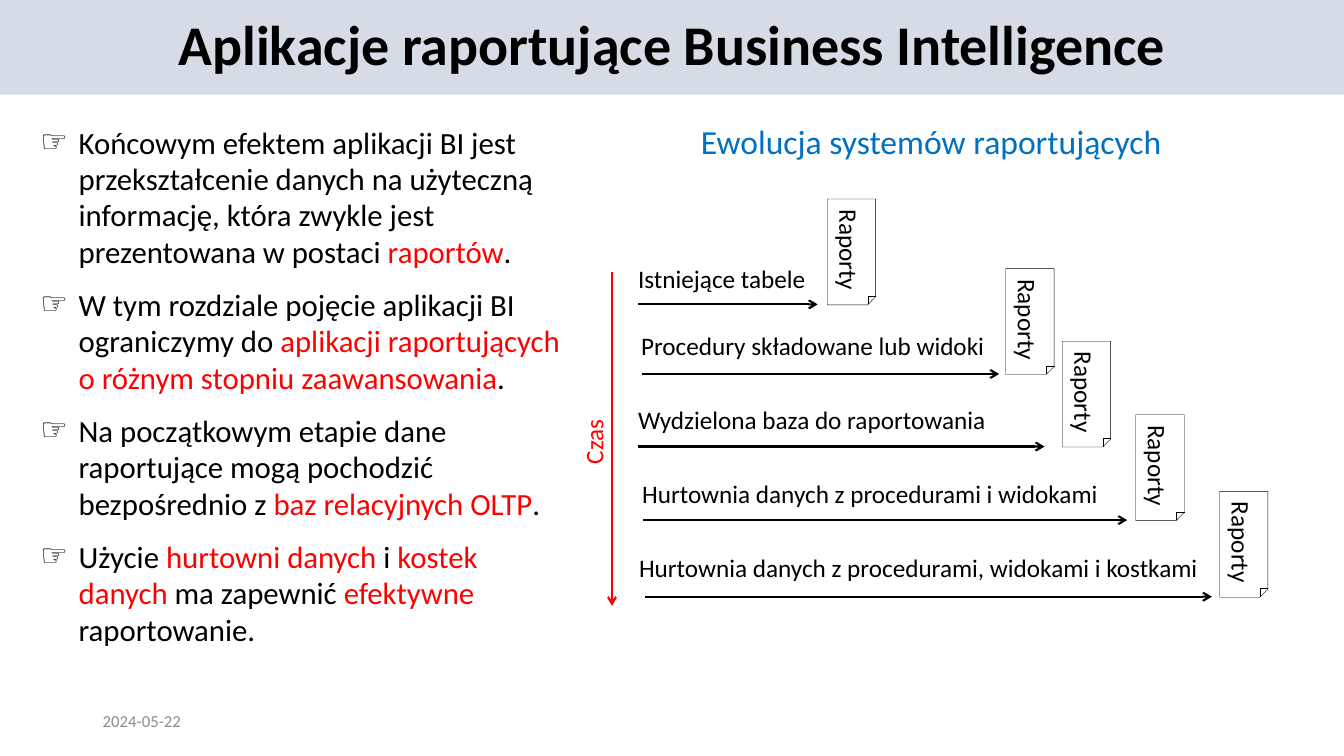
from lxml.etree import SubElement
from pptx import Presentation
from pptx.dml.color import RGBColor
from pptx.enum.shapes import MSO_CONNECTOR as Wire, MSO_SHAPE as Form
from pptx.enum.text import MSO_ANCHOR as Anchor, MSO_AUTO_SIZE as Auto, PP_ALIGN as Align
from pptx.oxml.ns import qn
from pptx.util import Inches, Pt

BLACK, RED, BLUE, GREY, BAND = "000000", "FF0000", "0070C0", "8C8C8C", "D6DCE5"

POINTS = [
    ["Końcowym efektem aplikacji BI jest przekształcenie danych na użyteczną informację, "
     "która zwykle jest prezentowana w postaci ", "raportów", "."],
    ["W tym rozdziale pojęcie aplikacji BI ograniczymy do ",
     "aplikacji raportujących o różnym stopniu zaawansowania", "."],
    ["Na początkowym etapie dane raportujące mogą pochodzić bezpośrednio z ",
     "baz relacyjnych OLTP", "."],
    ["Użycie ", "hurtowni danych", " i ", "kostek danych", " ma zapewnić ",
     "efektywne", " raportowanie."],
]

STAGES = [
    ("Istniejące tabele", 6.23, 2.56, 1.88, 6.33, 8.11, 7.92, 3.02),
    ("Procedury składowane lub widoki", 6.26, 3.23, 3.65, 6.37, 9.91, 9.69, 3.71),
    ("Wydzielona baza do raportowania", 6.23, 3.96, 3.69, 6.33, 10.36, 10.25, 4.43),
    ("Hurtownia danych z procedurami i widokami", 6.27, 4.7, 4.78, 6.38, 11.18, 10.98, 5.16),
    ("Hurtownia danych z procedurami, widokami i kostkami", 6.24, 5.43, 5.8,
     6.4, 12.02, 11.81, 5.92),
]


def color(code):
    return RGBColor.from_string(code)


def apply(thing, **style):
    for name, value in style.items():
        setattr(thing, name, value)


class Pen:
    font = "Calibri"

    def __init__(self, slide):
        self.slide = slide
        self.shapes = slide.shapes

    def group(self):
        self.shapes = self.slide.shapes.add_group_shape().shapes

    def place(self, shape, left, top, width, height):
        apply(shape, left=Inches(left), top=Inches(top),
              width=Inches(width), height=Inches(height))

    def words(self, para, text, size, code=BLACK, **style):
        run = para.add_run()
        run.text = text
        apply(run.font, name=self.font, size=Pt(size), **style)
        run.font.color.rgb = color(code)

    def title(self, text, *box):
        shape = self.slide.shapes.title
        self.place(shape, *box)
        shape.fill.solid()
        shape.fill.fore_color.rgb = color(BAND)
        apply(shape.text_frame, vertical_anchor=Anchor.MIDDLE, auto_size=Auto.NONE)
        para = shape.text_frame.paragraphs[0]
        apply(para, alignment=Align.CENTER, line_spacing=0.9)
        self.words(para, text, 40, bold=True)

    def points(self, items, *box):
        shape = self.slide.placeholders[1]
        self.place(shape, *box)
        frame = shape.text_frame
        apply(frame, auto_size=Auto.NONE, vertical_anchor=Anchor.TOP)
        for index, parts in enumerate(items):
            para = frame.add_paragraph() if index else frame.paragraphs[0]
            apply(para, line_spacing=Pt(26), space_before=Pt(12), alignment=Align.LEFT)
            props = para._p.get_or_add_pPr()
            props.set("marL", str(Inches(0.38)))
            props.set("indent", str(-Inches(0.38)))
            SubElement(props, qn("a:buChar")).set("char", "☞")
            for spot, text in enumerate(parts):
                self.words(para, text, 22, RED if spot % 2 else BLACK)

    def label(self, text, box, size=18, code=BLACK, wrap=False, align=Align.LEFT,
              anchor=Anchor.TOP, turn=0):
        left, top, width, height = map(Inches, box)
        shape = self.shapes.add_textbox(left, top, width, height)
        shape.rotation = turn
        apply(shape.text_frame, word_wrap=wrap, vertical_anchor=anchor,
              auto_size=Auto.NONE if wrap else Auto.SHAPE_TO_FIT_TEXT)
        para = shape.text_frame.paragraphs[0]
        para.alignment = align
        self.words(para, text, size, code)

    def line(self, start, end, weight=0.25, code=BLACK, arrow=False):
        wire = self.shapes.add_connector(Wire.STRAIGHT, *map(Inches, (*start, *end)))
        wire.line.width = Pt(weight)
        wire.line.color.rgb = color(code)
        props = wire._element.spPr
        if arrow:
            SubElement(props.find(qn("a:ln")), qn("a:tailEnd")).set("type", "arrow")
        SubElement(props, qn("a:effectLst"))

    def sheet(self, text, left, base):
        shape = self.shapes.add_shape(Form.SNIP_1_RECTANGLE, Inches(left),
                                      Inches(base - 0.76), Inches(1.05), Inches(0.48))
        shape.rotation = 90
        shape.shadow.inherit = False
        shape.fill.background()
        shape.line.width = Pt(0.25)
        shape.line.color.rgb = color(BLACK)
        shape.text_frame.vertical_anchor = Anchor.MIDDLE
        para = shape.text_frame.paragraphs[0]
        para.alignment = Align.CENTER
        self.words(para, text, 18)
        edge, fold, rise = left + 0.77, left + 0.69, base - 0.08
        self.line((edge, rise), (fold, rise))
        self.line((fold, rise), (fold, base))


def main():
    deck = Presentation()
    apply(deck, slide_width=Inches(13.33), slide_height=Inches(7.5))
    pen = Pen(deck.slides.add_slide(deck.slide_layouts[1]))
    pen.title("Aplikacje raportujące Business Intelligence", 0, 0, 13.33, 0.94)
    pen.label("2024-05-22", (0.92, 6.95, 3, 0.4), 12, GREY, wrap=True, anchor=Anchor.MIDDLE)
    pen.points(POINTS, 0.3, 1.18, 5.39, 5.35)
    pen.label("Ewolucja systemów raportujących", (5.88, 1.15, 6.71, 0.5), 24, BLUE,
              wrap=True, align=Align.CENTER)
    for text, left, top, width, start, end, sheet, base in STAGES:
        pen.group()
        pen.sheet("Raporty", sheet, base)
        pen.line((start, base), (end, base), 1.5, arrow=True)
        pen.label(text, (left, top, width, 0.4))
    pen.group()
    pen.line((6.07, 2.7), (6.07, 6.01), 1.5, RED, arrow=True)
    pen.label("Czas", (5.56, 4.18, 0.65, 0.4), code=RED, turn=270)
    deck.save("out.pptx")


if __name__ == "__main__":
    main()
